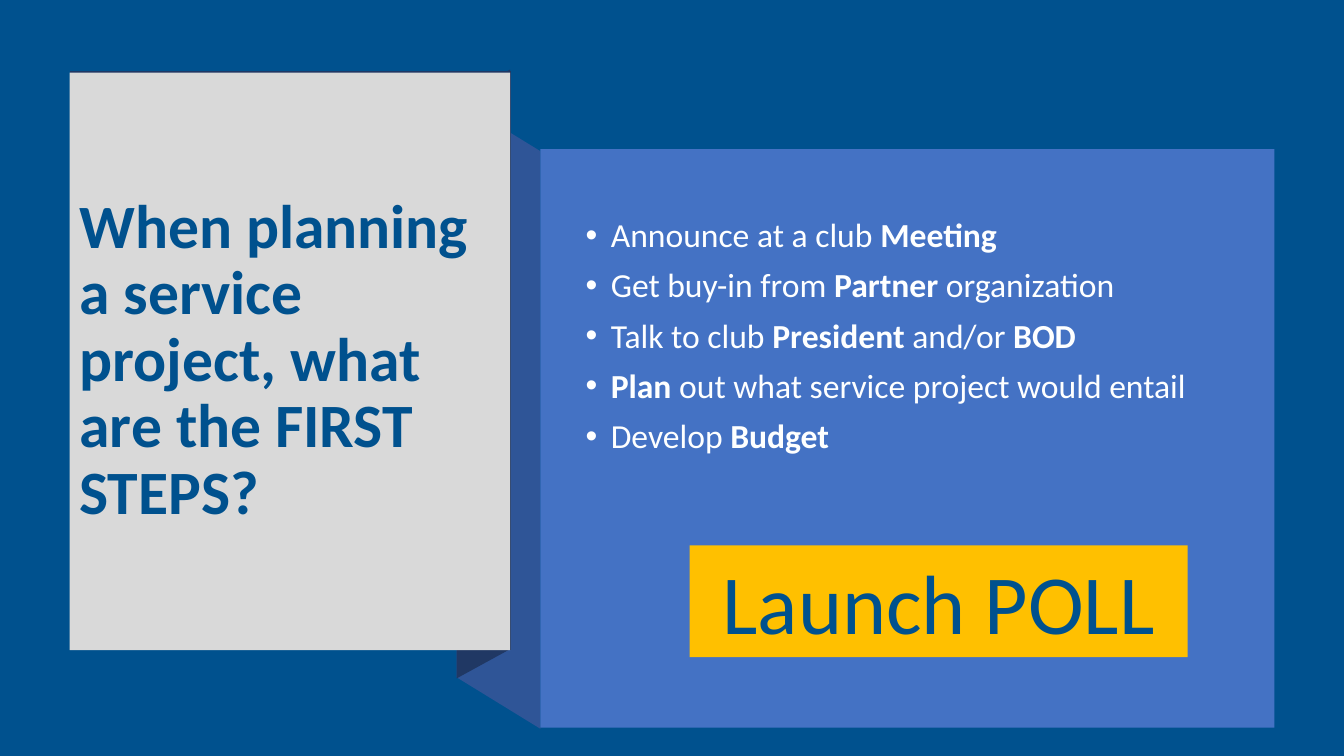
from pptx import Presentation
from pptx.dml.color import RGBColor
from pptx.enum.shapes import MSO_SHAPE
from pptx.enum.text import MSO_ANCHOR, PP_ALIGN
from pptx.oxml.ns import qn
from pptx.util import Inches, Pt
from lxml.etree import SubElement

TITLE = "When planning a service project, what are the FIRST STEPS?"
STEPS = [
    [("Announce at a club ", False), ("Meeting", True)],
    [("Get buy-in from ", False), ("Partner", True), (" organization", False)],
    [("Talk to club ", False), ("President", True), (" and/or ", False), ("BOD", True)],
    [("Plan ", True), ("out what service project would entail", False)],
    [("Develop ", False), ("Budget", True)],
]
BUTTON = "Launch POLL"

THEME = {
    "font": "Calibri",
    "navy": "00518E", "fold": "2F5597", "shade": "203864", "card": "D9D9D9",
    "panel": "4472C4", "button": "FFC000", "text": "FEFFFF",
    "title_size": 44, "step_size": 24, "button_size": 60,
}

CARD = (0.69, 0.72, 4.37, 5.73)
PANEL = (5.36, 1.48, 7.28, 5.74)
STEP_BOX = (5.71, 1.88, 6.51, 2.93)
BUTTON_BOX = (6.84, 5.41, 4.94, 1.11)
FOLDS = [
    ("fold", [(5.36, 7.23), (4.53, 6.72), (4.53, 0.99), (5.36, 1.5)]),
    ("shade", [(5.06, 6.44), (4.53, 6.73), (4.53, 0.98), (5.06, 0.69)]),
    ("shade", [(0.69, 0.7), (5.07, 0.7), (5.07, 6.45), (0.69, 6.45)]),
]


def color(name):
    return RGBColor.from_string(THEME[name])


def paint(sp, fill):
    sp.fill.solid()
    sp.fill.fore_color.rgb = color(fill)
    sp.line.fill.background()
    sp.shadow.inherit = False


def add_rect(shapes, box, fill):
    sp = shapes.add_shape(MSO_SHAPE.RECTANGLE, *map(Inches, box))
    paint(sp, fill)
    return sp


def add_fold(shapes, fill, points):
    start, *rest = [(Inches(x), Inches(y)) for x, y in points]
    builder = shapes.build_freeform(*start)
    builder.add_line_segments(rest, close=True)
    paint(builder.convert_to_shape(), fill)


def add_run(p, text, size, fill, bold=False):
    r = p.add_run()
    r.text = text
    r.font.name = THEME["font"]
    r.font.size = Pt(THEME[size])
    r.font.bold = bold
    r.font.color.rgb = color(fill)


def set_frame(sp):
    tf = sp.text_frame
    tf.word_wrap = True
    tf.vertical_anchor = MSO_ANCHOR.MIDDLE
    return tf


def add_bullet(p):
    pPr = p._p.get_or_add_pPr()
    pPr.set("marL", str(Inches(0.25)))
    pPr.set("indent", str(Inches(-0.25)))
    SubElement(pPr, qn("a:buFont")).set("typeface", "Arial")
    SubElement(pPr, qn("a:buChar")).set("char", "•")


def add_steps(shapes):
    tf = set_frame(shapes.add_textbox(*map(Inches, STEP_BOX)))
    for i, step in enumerate(STEPS):
        p = tf.add_paragraph() if i else tf.paragraphs[0]
        p.line_spacing = 0.9
        p.space_before = Pt(10)
        add_bullet(p)
        for text, bold in step:
            add_run(p, text, "step_size", "text", bold)


def main():
    prs = Presentation()
    prs.slide_width, prs.slide_height = Inches(13.33), Inches(7.5)
    s = prs.slides.add_slide(prs.slide_layouts[6])
    s.background.fill.solid()
    s.background.fill.fore_color.rgb = color("navy")

    for fill, points in FOLDS:
        add_fold(s.shapes, fill, points)

    p = set_frame(add_rect(s.shapes, CARD, "card")).paragraphs[0]
    p.alignment = PP_ALIGN.LEFT
    p.line_spacing = 0.9
    add_run(p, TITLE, "title_size", "navy", True)

    add_rect(s.shapes, PANEL, "panel")
    add_steps(s.shapes)

    p = set_frame(add_rect(s.shapes, BUTTON_BOX, "button")).paragraphs[0]
    p.alignment = PP_ALIGN.CENTER
    add_run(p, BUTTON, "button_size", "navy")

    prs.save("out.pptx")


if __name__ == "__main__":
    main()
